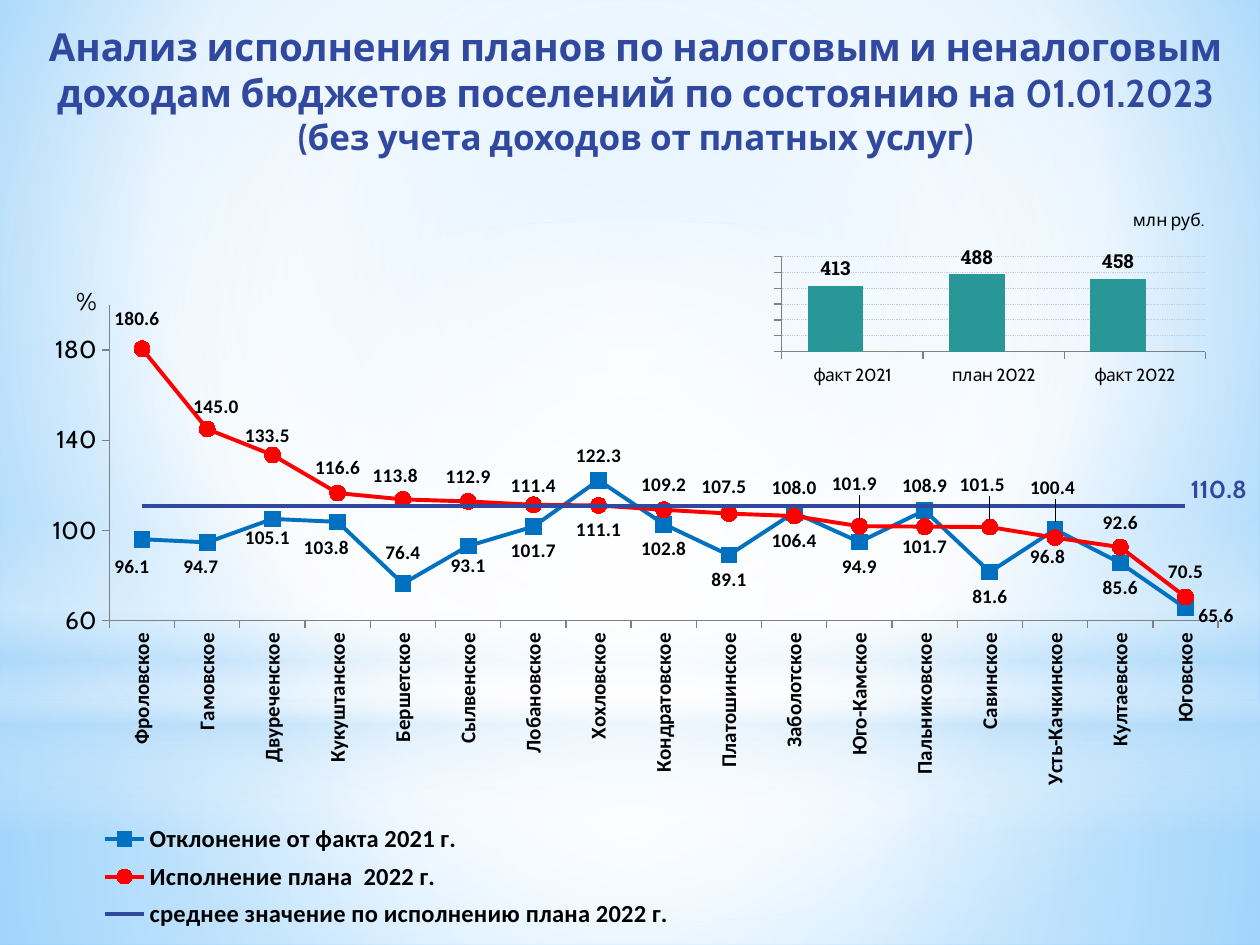
from lxml import etree
from pptx import Presentation
from pptx.chart.data import CategoryChartData
from pptx.dml.color import RGBColor
from pptx.enum.chart import (XL_CHART_TYPE, XL_LABEL_POSITION, XL_LEGEND_POSITION,
                             XL_MARKER_STYLE, XL_TICK_LABEL_POSITION, XL_TICK_MARK)
from pptx.enum.dml import MSO_LINE
from pptx.enum.shapes import MSO_SHAPE
from pptx.enum.text import MSO_ANCHOR, PP_ALIGN
from pptx.oxml.ns import qn
from pptx.util import Cm, Pt

RECT, OVAL = MSO_SHAPE.RECTANGLE, MSO_SHAPE.OVAL
LINE, COLUMN = XL_CHART_TYPE.LINE_MARKERS, XL_CHART_TYPE.COLUMN_CLUSTERED
SQUARE, CIRCLE, NO_MARKER = XL_MARKER_STYLE.SQUARE, XL_MARKER_STYLE.CIRCLE, XL_MARKER_STYLE.NONE
POSITIONS = {"t": XL_LABEL_POSITION.ABOVE, "b": XL_LABEL_POSITION.BELOW,
             "r": XL_LABEL_POSITION.RIGHT}
OUT_END = XL_LABEL_POSITION.OUTSIDE_END
LEGEND_BOTTOM = XL_LEGEND_POSITION.BOTTOM
TICK_OUT, TICK_NONE = XL_TICK_MARK.OUTSIDE, XL_TICK_MARK.NONE
NO_LABELS = XL_TICK_LABEL_POSITION.NONE

BLUE, RED, INDIGO, TEAL = "0070C0", "FF0000", "31489F", "299797"
SETTLEMENTS = ["Фроловское", "Гамовское", "Двуреченское", "Кукуштанское", "Бершетское",
               "Сылвенское", "Лобановское", "Хохловское", "Кондратовское", "Платошинское",
               "Заболотское", "Юго-Камское", "Пальниковское", "Савинское",
               "Усть-Качкинское", "Култаевское", "Юговское"]
DEVIATION = [96.1, 94.7, 105.1, 103.8, 76.4, 93.1, 101.7, 122.3, 102.8, 89.1, 108, 94.9,
             108.9, 81.6, 100.4, 85.6, 65.6]
EXECUTION = [180.6, 145, 133.5, 116.6, 113.8, 112.9, 111.4, 111.1, 109.2, 107.5, 106.4,
             101.9, 101.7, 101.5, 96.8, 92.6, 70.5]
AVERAGE = [110.8] * len(SETTLEMENTS)
DEVIATION_SHIFTS = {0: (-0.8, 0.3), 1: (-0.5, 0), 2: (-0.4, -0.7), 3: (-0.9, 0.2),
                    4: (0, -0.7), 5: (0, -0.6), 14: (-0.2, -2), 16: (0, 0.9)}
EXECUTION_SHIFTS = {0: (-0.4, -0.6), 1: (0.7, 0.3), 2: (-0.4, 0.7), 4: (-0.6, 0.1),
                    6: (0, 0.7), 9: (-0.4, -0.2), 11: (-0.4, -2.1), 12: (0, -0.5),
                    13: (-0.6, -2.1), 14: (-0.6, -0.6)}


def rgb(value):
    return RGBColor.from_string(value)


def set_layout(parent, index, **values):
    layout = parent.find(qn("c:layout"))
    if layout is None:
        layout = etree.Element(qn("c:layout"))
        parent.insert(index, layout)
    manual = etree.SubElement(layout, qn("c:manualLayout"))
    for tag, value in values.items():
        etree.SubElement(manual, qn("c:" + tag)).set("val", str(value))


class Deck:
    heading = "Cabin"
    body = "Calibri"
    digits = "Roboto Slab"
    axis_color = "808080"

    def __init__(self):
        self.prs = Presentation()
        self.prs.slide_width, self.prs.slide_height = Cm(25.4), Cm(19.05)
        self.s = self.prs.slides.add_slide(self.prs.slide_layouts[5])

    def font(self, font, size, name, bold=False, color="000000"):
        font.size, font.name, font.bold = Pt(size), name, bold
        font.color.rgb = rgb(color)

    def gradient(self, fill, element, stops, focus=None):
        fill.gradient()
        grad = element.find(".//" + qn("a:gradFill"))
        for child in list(grad):
            grad.remove(child)
        gs_list = etree.SubElement(grad, qn("a:gsLst"))
        for pos, color, opacity in stops:
            gs = etree.SubElement(gs_list, qn("a:gs"), pos=str(pos * 1000))
            clr = etree.SubElement(gs, qn("a:srgbClr"), val=color)
            if opacity < 100:
                etree.SubElement(clr, qn("a:alpha"), val=str(opacity * 1000))
        if focus:
            shade = etree.SubElement(grad, qn("a:path"), path="circle")
            sides = {side: str(v * 1000) for side, v in zip("ltrb", focus)}
            etree.SubElement(shade, qn("a:fillToRect"), **sides)
        else:
            etree.SubElement(grad, qn("a:lin"), ang="5400000", scaled="0")

    def background(self, stops, focus):
        self.gradient(self.s.background.fill, self.s._element, stops, focus)

    def glow(self, kind, top, height, stops, focus=(50, 50, 50, 50)):
        sp = self.s.shapes.add_shape(kind, 0, Cm(top), Cm(25.4), Cm(height))
        sp.shadow.inherit = False
        sp.line.fill.background()
        self.gradient(sp.fill, sp._element, stops, focus)

    def title(self, box, text, sizes):
        sp = self.s.shapes.title
        sp.left, sp.top, sp.width, sp.height = map(Cm, box)
        self.s.shapes._spTree.append(sp._element)
        tf = sp.text_frame
        tf.text = text
        tf.word_wrap, tf.vertical_anchor = True, MSO_ANCHOR.MIDDLE
        p = tf.paragraphs[0]
        p.alignment = PP_ALIGN.CENTER
        for r, size in zip(p.runs, sizes):
            self.font(r.font, size, self.heading, True, INDIGO)

    def chart(self, kind, box, cats, series, fmt, plot):
        data = CategoryChartData(number_format=fmt)
        data.categories = cats
        for name, values in series:
            data.add_series(name, values)
        chart = self.s.shapes.add_chart(kind, *map(Cm, box), data).chart
        chart.has_title = chart.has_legend = False
        self.font(chart.font, 18, self.heading)
        x, y, w, h = plot
        set_layout(chart._chartSpace.chart.plotArea, 0, layoutTarget="inner",
                   xMode="edge", yMode="edge", x=x, y=y, w=w, h=h)
        return chart

    def axis(self, axis, size, name, bold=False):
        axis.major_tick_mark, axis.minor_tick_mark = TICK_OUT, TICK_NONE
        axis.format.line.color.rgb = rgb(self.axis_color)
        self.font(axis.tick_labels.font, size, name, bold)

    def scale(self, axis, size, name, low, high, step, unit, unit_size, unit_at):
        self.axis(axis, size, name)
        axis.has_major_gridlines = False
        axis.minimum_scale, axis.maximum_scale, axis.major_unit = low, high, step
        axis.tick_labels.number_format = "#,##0"
        axis.tick_labels.number_format_is_linked = False
        tf = axis.axis_title.text_frame
        tf.text = unit
        self.font(tf.paragraphs[0].runs[0].font, unit_size, self.heading)
        title = axis.axis_title._element
        title.find(".//" + qn("a:bodyPr")).set("rot", "0")
        set_layout(title, 1, xMode="edge", yMode="edge", x=unit_at[0], y=unit_at[1])

    def line_series(self, series, color, marker):
        series.smooth = False
        series.format.line.color.rgb = rgb(color)
        series.format.line.width = Pt(2.25)
        series.marker.style = marker
        if marker != NO_MARKER:
            series.marker.size = 9
            series.marker.format.fill.solid()
            series.marker.format.fill.fore_color.rgb = rgb(color)
            series.marker.format.line.color.rgb = rgb(color)

    def point_label(self, series, index, side, shift, size, name, color="000000"):
        label = series.points[index].data_label
        self.font(label.font, size, name, True, color)
        label.position = POSITIONS[side]
        if shift:
            dx, dy = shift
            set_layout(label._dLbl, 1, x=dx / 100, y=dy / 100)

    def legend(self, chart, x, y, w, h):
        chart.has_legend = True
        legend = chart.legend
        legend.position, legend.include_in_layout = LEGEND_BOTTOM, False
        self.font(legend.font, 14, self.body, True)
        set_layout(legend._element, 1, xMode="edge", yMode="edge", x=x, y=y, w=w, h=h)


def main():
    deck = Deck()
    deck.background([(0, "9ED5FF", 100), (60, "FFFFFF", 100), (100, "5BB9FF", 100)],
                    (20, 10, 20, 60))
    deck.glow(RECT, 14.17, 4.88, [(0, "FFFFFF", 91), (37, "FFFFFF", 76), (100, "B4DCFA", 79)])
    deck.glow(RECT, 0, 14.17, [(0, "FFFFFF", 89), (48, "FFFFFF", 62), (100, "B4DCFA", 79)])
    deck.glow(RECT, 10.46, 6.35, [(0, "FFFFFF", 0), (29, "FFFFFF", 30), (45, "B4DCFA", 40),
                                  (55, "FFFFFF", 26), (65, "B4DCFA", 60), (100, "FFFFFF", 0)],
              None)
    deck.glow(OVAL, 4.45, 14.17, [(0, "FFFFFF", 100), (56, "FFFFFF", 0)])
    deck.title((0.51, 0.33, 24.61, 2.97),
               "Анализ исполнения планов по налоговым и неналоговым доходам бюджетов поселений "
               "по состоянию на 01.01.2023\v(без учета доходов от платных услуг)", (22, 20))

    chart = deck.chart(LINE, (-0.08, 1.85, 25.4, 17.2), SETTLEMENTS,
                       [("Отклонение от факта 2021 г.", DEVIATION),
                        ("Исполнение плана  2022 г.", EXECUTION),
                        ("среднее значение по исполнению плана 2022 г.", AVERAGE)],
                       "#,##0.0", (0.09, 0.25, 0.88, 0.37))
    deck.axis(chart.category_axis, 12, deck.body, True)
    labels = chart.category_axis._element.find(qn("c:txPr"))
    labels.find(qn("a:bodyPr")).set("rot", "-5400000")
    deck.scale(chart.value_axis, 14, deck.heading, 60, 200, 40, "%", 14, (0.06, 0.22))
    deviation, execution, average = chart.plots[0].series
    for series, color, marker in ((deviation, BLUE, SQUARE), (execution, RED, CIRCLE),
                                  (average, INDIGO, NO_MARKER)):
        deck.line_series(series, color, marker)
    for series, sides, shifts in ((deviation, "bbbbtbbtbbtbtbtbr", DEVIATION_SHIFTS),
                                  (execution, "tttttttbttbtbtbtt", EXECUTION_SHIFTS)):
        for i, side in enumerate(sides):
            deck.point_label(series, i, side, shifts.get(i), 11, deck.body)
    deck.point_label(average, len(AVERAGE) - 1, "r", (0, -1.9), 14, deck.heading, INDIGO)
    deck.legend(chart, 0.08, 0.85, 0.46, 0.14)

    chart = deck.chart(COLUMN, (15.49, 3.73, 8.99, 4.8),
                       ["факт 2021", "план 2022", "факт 2022"],
                       [("Series 1", [413, 488, 458]), ("Series 2", [0, None, None])],
                       "#,##0", (0.03, 0.3, 0.95, 0.4))
    deck.axis(chart.category_axis, 10, deck.heading)
    axis = chart.value_axis
    deck.scale(axis, 12, deck.digits, 0, 600, 100, "млн руб.", 10, (0.81, 0.08))
    axis.tick_label_position = NO_LABELS
    grid = axis.major_gridlines.format.line
    grid.color.rgb, grid.width, grid.dash_style = rgb("C8CDE5"), Pt(0.5), MSO_LINE.ROUND_DOT
    plot = chart.plots[0]
    plot.gap_width, plot.overlap, plot.vary_by_categories = 94, 40, False
    for series, color in zip(plot.series, (TEAL, "A7EA52")):
        series.format.fill.solid()
        series.format.fill.fore_color.rgb = rgb(color)
    labels = plot.series[0].data_labels
    labels.show_value, labels.position = True, OUT_END
    deck.font(labels.font, 11, deck.digits, True)
    deck.prs.save("out.pptx")


if __name__ == "__main__":
    main()
